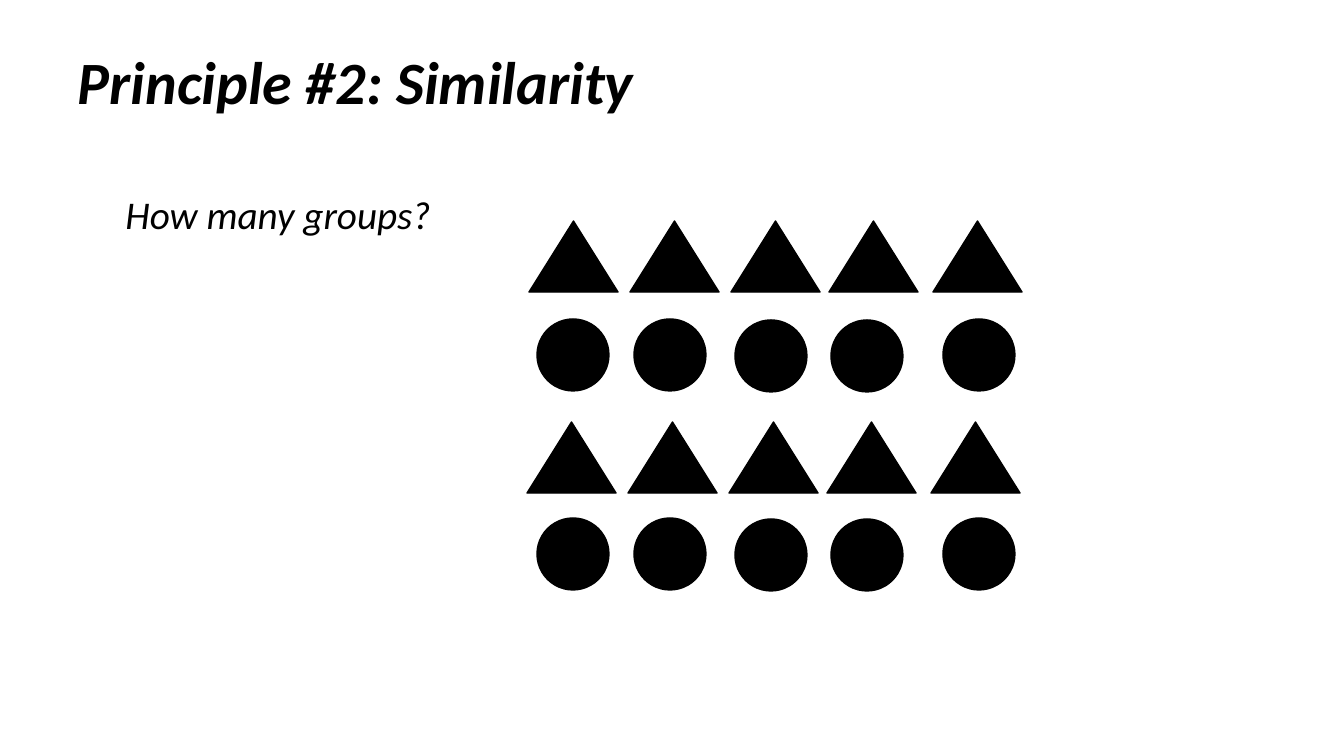
from dataclasses import dataclass

from pptx import Presentation
from pptx.dml.color import RGBColor
from pptx.enum.shapes import MSO_SHAPE as Shape
from pptx.enum.text import MSO_ANCHOR as Anchor, PP_ALIGN as Align
from pptx.util import Pt

SCALE = 914400 / 100.8


@dataclass(frozen=True)
class Theme:
    """Colours, font and type sizes of the slide."""
    ink: RGBColor = RGBColor(0, 0, 0)
    font: str = "Calibri"
    title: float = 42.9
    body: float = 28
    line: float = 1


THEME = Theme()
TRI_STEPS = (0, 101, 202, 300, 404)
DOT_STEPS = (0, 97, 198, 294, 406)
DOT_DROPS = (0, 0, 1, 1, 0)


def px(*sizes):
    """Turn pixel lengths into EMU."""
    return [round(size * SCALE) for size in sizes]


def add_text(slide, box, text, size, bold=False, align=Align.LEFT,
             anchor=Anchor.TOP, space=1.0):
    """Place one line of italic text in the box."""
    frame = slide.shapes.add_textbox(*px(*box)).text_frame
    frame.word_wrap = True
    frame.vertical_anchor = anchor
    para = frame.paragraphs[0]
    para.alignment = align
    para.line_spacing = space
    run = para.add_run()
    run.text = text
    font = run.font
    font.name, font.size = THEME.font, Pt(size)
    font.bold, font.italic = bold, True
    font.color.rgb = THEME.ink


def add_row(slide, kind, box, steps, drops=(0,) * 5):
    """Group a row of equal marks, the first of which fills the box."""
    left, top, width, height = box
    group = slide.shapes.add_group_shape()
    for step, drop in zip(steps, drops):
        mark = group.shapes.add_shape(
            kind, *px(left + step, top + drop, width, height))
        mark.shadow.inherit = False
        mark.fill.solid()
        mark.fill.fore_color.rgb = THEME.ink
        mark.line.color.rgb = THEME.ink
        mark.line.width = Pt(THEME.line)


def add_marks(slide, left, top):
    """Stack alternating rows of triangles and dots."""
    tri, dot = Shape.ISOSCELES_TRIANGLE, Shape.OVAL
    add_row(slide, tri, (left + 2, top, 89, 71), TRI_STEPS)
    add_row(slide, tri, (left, top + 201, 89, 71), TRI_STEPS)
    for drop in (98, 297):
        add_row(slide, dot, (left + 10, top + drop, 72, 72),
                DOT_STEPS, DOT_DROPS)


def main():
    """Build and save the slide."""
    deck = Presentation()
    deck.slide_width, deck.slide_height = px(1344, 756)
    slide = deck.slides.add_slide(deck.slide_layouts[6])
    add_text(slide, (68, 21, 916, 101), "Principle #2: Similarity",
             THEME.title, bold=True, anchor=Anchor.BOTTOM, space=0.9)
    add_text(slide, (111, 185, 334, 57), "How many groups?",
             THEME.body, align=Align.CENTER)
    add_marks(slide, 527, 221)
    deck.save("out.pptx")


if __name__ == "__main__":
    main()
